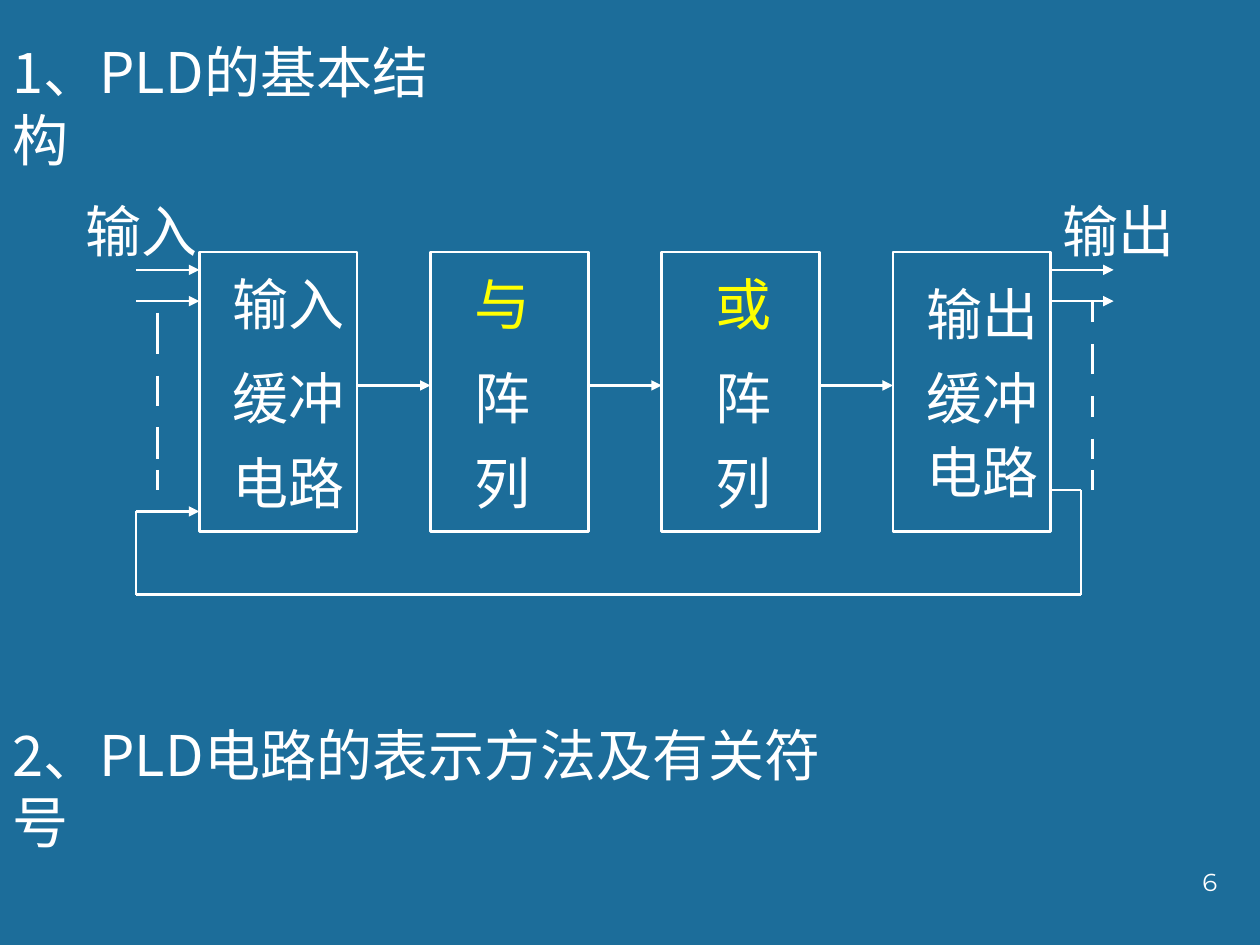
"""Build the slide on the basic structure of a PLD."""
from lxml.etree import SubElement
from pptx import Presentation
from pptx.dml.color import RGBColor
from pptx.enum.shapes import MSO_CONNECTOR as Link, MSO_SHAPE as Shape
from pptx.enum.text import PP_ALIGN as Align
from pptx.oxml.ns import qn
from pptx.util import Cm, Pt

WHITE, YELLOW, BLUE = "FFFFFF", "FFFF00", "1C6D9A"
LATIN, HAN = "Montserrat", "Noto Sans CJK SC"


def paint(color_format, color):
    color_format.rgb = RGBColor.from_string(color)


def write(text, left, top, width, height=1.6, color=WHITE, wrap=False, align=Align.LEFT, **font):
    frame = slide.shapes.add_textbox(Cm(left), Cm(top), Cm(width), Cm(height)).text_frame
    frame.word_wrap = wrap
    paragraph = frame.paragraphs[0]
    paragraph.alignment = align
    run = paragraph.add_run()
    run.text = text
    for key, value in {"name": LATIN, "size": Pt(32), **font}.items():
        setattr(run.font, key, value)
    paint(run.font.color, color)


deck = Presentation()
for side, length in {"slide_width": 25.4, "slide_height": 19.05}.items():
    setattr(deck, side, Cm(length))
slide = deck.slides.add_slide(deck.slide_layouts[6])
slide.background.fill.solid()
paint(slide.background.fill.fore_color, BLUE)

block_left, block_top, block_width, block_height, block_step = 4.02, 5.08, 3.18, 5.64, 4.66
block_lefts = [block_left + block_step * i for i in range(4)]
output_edge = block_lefts[-1] + block_width
for left in block_lefts:
    block = slide.shapes.add_shape(
        Shape.RECTANGLE, Cm(left), Cm(block_top), Cm(block_width), Cm(block_height))
    block.shadow.inherit = False
    block.fill.background()
    block.line.width = Pt(1.5)
    paint(block.line.color, WHITE)

bus_left, bus_right, bus_bottom = 2.74, 21.79, 11.99
feedback = [(output_edge, 9.88), (bus_right, 9.88), (bus_right, bus_bottom),
            (bus_left, bus_bottom), (bus_left, 10.31), (block_left, 10.31)]
*feedback_wires, feedback_arrow = zip(feedback, feedback[1:])

arrows = [((left + block_width, 7.77), (following, 7.77))
          for left, following in zip(block_lefts, block_lefts[1:])]
for y in (5.44, 6.07):
    arrows.append(((output_edge, y), (output_edge + 1.27, y)))
    arrows.append(((bus_left, y), (block_left, y)))
arrows.append(feedback_arrow)

dashes = {
    22.02: [(6.07, 6.5), (6.93, 7.54), (7.98, 8.41), (8.84, 9.25), (9.47, 9.88)],
    3.18: [(6.3, 7.14), (7.57, 8.18), (8.61, 9.25), (9.47, 9.88)],
}
wires = feedback_wires + [((x, top), (x, bottom))
                          for x, spans in dashes.items() for top, bottom in spans]

for paths, head in ((arrows, "triangle"), (wires, "none")):
    for start, end in paths:
        wire = slide.shapes.add_connector(Link.STRAIGHT, *map(Cm, start + end))
        wire.line.width = Pt(1.5)
        paint(wire.line.color, WHITE)
        SubElement(wire.line._get_or_add_ln(), qn("a:tailEnd"), type=head)
        SubElement(wire._element.spPr, qn("a:effectLst"))

block_labels = [
    (4.44, 2.77, WHITE, {"输入": 5.31, "缓冲": 7.21, "电路": 8.92}),
    (9.32, 1.65, YELLOW, {"与": 5.31, "阵": 7.21, "列": 8.92}),
    (14.17, 1.65, YELLOW, {"或": 5.31, "阵": 7.21, "列": 8.92}),
    (18.42, 2.77, WHITE, {"输出": 5.51, "缓冲": 7.21, "电路": 8.69}),
]
for left, width, first_color, words in block_labels:
    for row, (word, top) in enumerate(words.items()):
        write(word, left, top, width, color=WHITE if row else first_color)

for word, left in {"输入": 1.47, "输出": 21.16}.items():
    write(word, left, 3.84, 2.77)

write("1、PLD的基本结构", 0, 0.64, 9.55, wrap=True, name=HAN)
write("2、PLD电路的表示方法及有关符号", 0, 14.4, 17.45, wrap=True, name=HAN)
write("6", 19.51, 17.35, 5.28, 1.27, wrap=True, align=Align.RIGHT, size=Pt(14))

deck.save("out.pptx")
